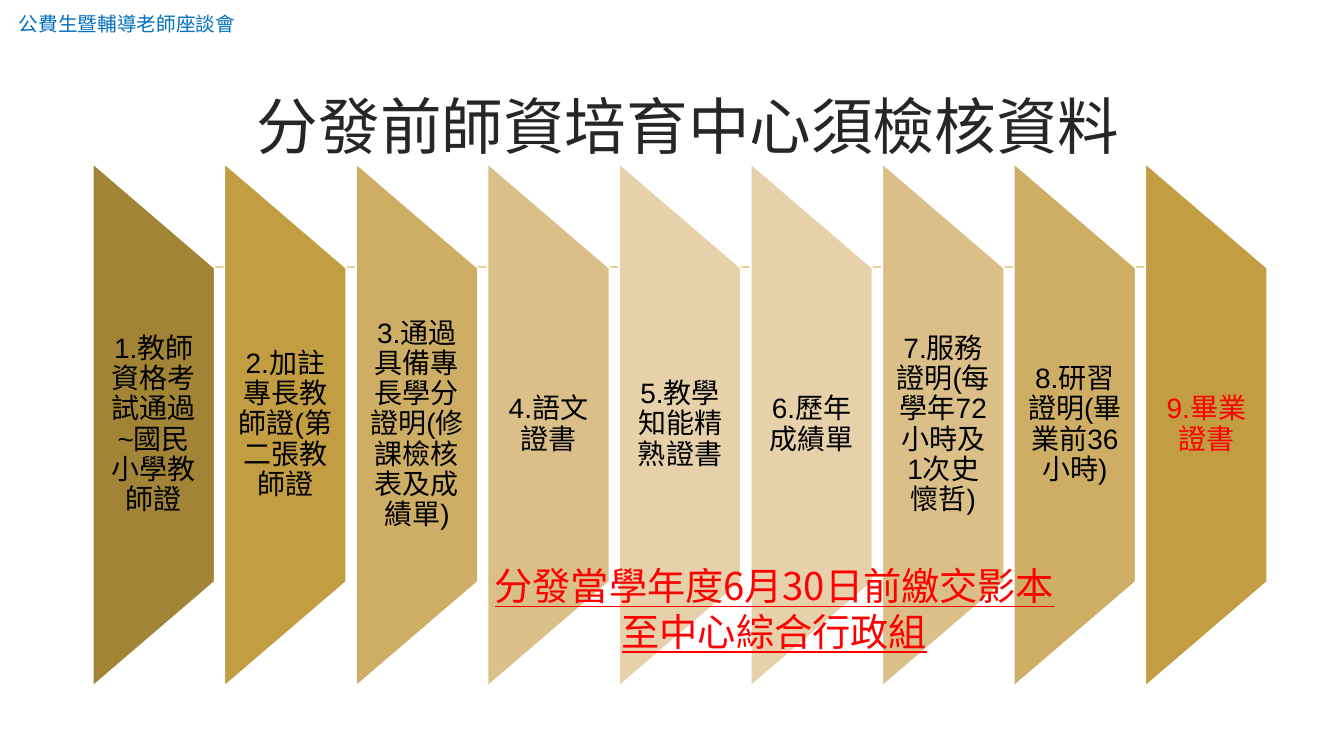
from lxml.etree import SubElement
from pptx import Presentation
from pptx.dml.color import RGBColor
from pptx.enum.shapes import MSO_CONNECTOR as Conn, MSO_SHAPE as Geo
from pptx.enum.text import MSO_ANCHOR as Anchor, MSO_AUTO_SIZE as Auto, PP_ALIGN as Align
from pptx.oxml.ns import qn
from pptx.util import Emu, Pt

UNIT = 9144
CJK = "Noto Sans CJK SC"
STEPS = [
    ("1.教師資格考試通過~國民小學教師證", "A18435", "000000"),
    ("2.加註專長教師證(第二張教師證", "C29D42", "000000"),
    ("3.通過具備專長學分證明(修課檢核表及成績單)", "CEAE65", "000000"),
    ("4.語文證書", "DABF88", "000000"),
    ("5.教學知能精熟證書", "E6D1AB", "000000"),
    ("6.歷年成績單", "E6D1AB", "000000"),
    ("7.服務證明(每學年72小時及1次史懷哲)", "DABF88", "000000"),
    ("8.研習證明(畢業前36小時)", "CEAE65", "000000"),
    ("9.畢業證書", "C29D42", "FF0000"),
]


def px(n):
    return Emu(round(n * UNIT))


def tint(code):
    return RGBColor.from_string(code)


def write(shape, lines, size, color, name="Arial", align=Align.CENTER,
          space=1.0, pad=10, edge=5, under=None):
    frame = shape.text_frame
    look = {"word_wrap": True, "auto_size": Auto.NONE,
            "vertical_anchor": Anchor.MIDDLE,
            "margin_left": px(pad), "margin_right": px(pad),
            "margin_top": px(edge), "margin_bottom": px(edge)}
    for key, value in look.items():
        setattr(frame, key, value)
    for i, line in enumerate(lines):
        para = frame.add_paragraph() if i else frame.paragraphs[0]
        para.alignment = align
        para.line_spacing = space
        run = para.add_run()
        run.text = line
        style = {"size": Pt(size), "name": name, "underline": under}
        for key, value in style.items():
            setattr(run.font, key, value)
        run.font.color.rgb = tint(color)
        east = SubElement(run.font._element, qn("a:ea"))
        east.set("typeface", CJK)


def text_box(slide, box):
    return slide.shapes.add_textbox(*map(px, box))


def rule(slide, left, right, top):
    line = slide.shapes.add_connector(
        Conn.STRAIGHT, px(left), px(top), px(right), px(top))
    line.line.color.rgb = tint("E8D191")
    line.line.width = Pt(1.25)
    SubElement(line._element.spPr, qn("a:effectLst"))


def head(slide, box):
    title = slide.shapes.title
    for key, value in zip(("left", "top", "width", "height"), box):
        setattr(title, key, px(value))
    write(title, ["分發前師資培育中心須檢核資料"], 44, "262626", CJK)


def panel(slide, box, label, fill, color):
    left, top, wide, high = box
    shift = (high - wide) / 2
    shape = slide.shapes.add_shape(
        Geo.FLOWCHART_MANUAL_OPERATION,
        px(left - shift), px(top + shift), px(high), px(wide))
    shape.rotation = 270
    shape.shadow.inherit = False
    shape.fill.solid()
    shape.fill.fore_color.rgb = tint(fill)
    shape.line.color.rgb = tint("FFFFFF")
    shape.line.width = Pt(1.25)
    inner = high * 3 / 5
    area = left, top + (high - inner) / 2, wide, inner
    write(text_box(slide, area), [label], 20, color, space=0.9, pad=14, edge=0)


def steps(slide, box):
    left, top, wide, high = box
    each = 121
    pitch = (wide - each) / (len(STEPS) - 1)
    for i, step in enumerate(STEPS):
        panel(slide, (left + i * pitch, top, each, high), *step)


def main():
    deck = Presentation()
    deck.slide_width, deck.slide_height = px(1333), px(750)
    slide = deck.slides.add_slide(deck.slide_layouts[5])
    rule(slide, 153, 1181, 265)
    write(text_box(slide, (9, 8, 570, 31)), ["公費生暨輔導老師座談會"],
          14, "0070C0", align=Align.LEFT)
    head(slide, (158, 52, 1050, 143))
    steps(slide, (92, 162, 1165, 519))
    write(text_box(slide, (400, 532, 736, 143)),
          ["分發當學年度6月30日前繳交影本", "至中心綜合行政組"],
          27.3, "FF0000", CJK, under=True)
    deck.save("out.pptx")


if __name__ == "__main__":
    main()
